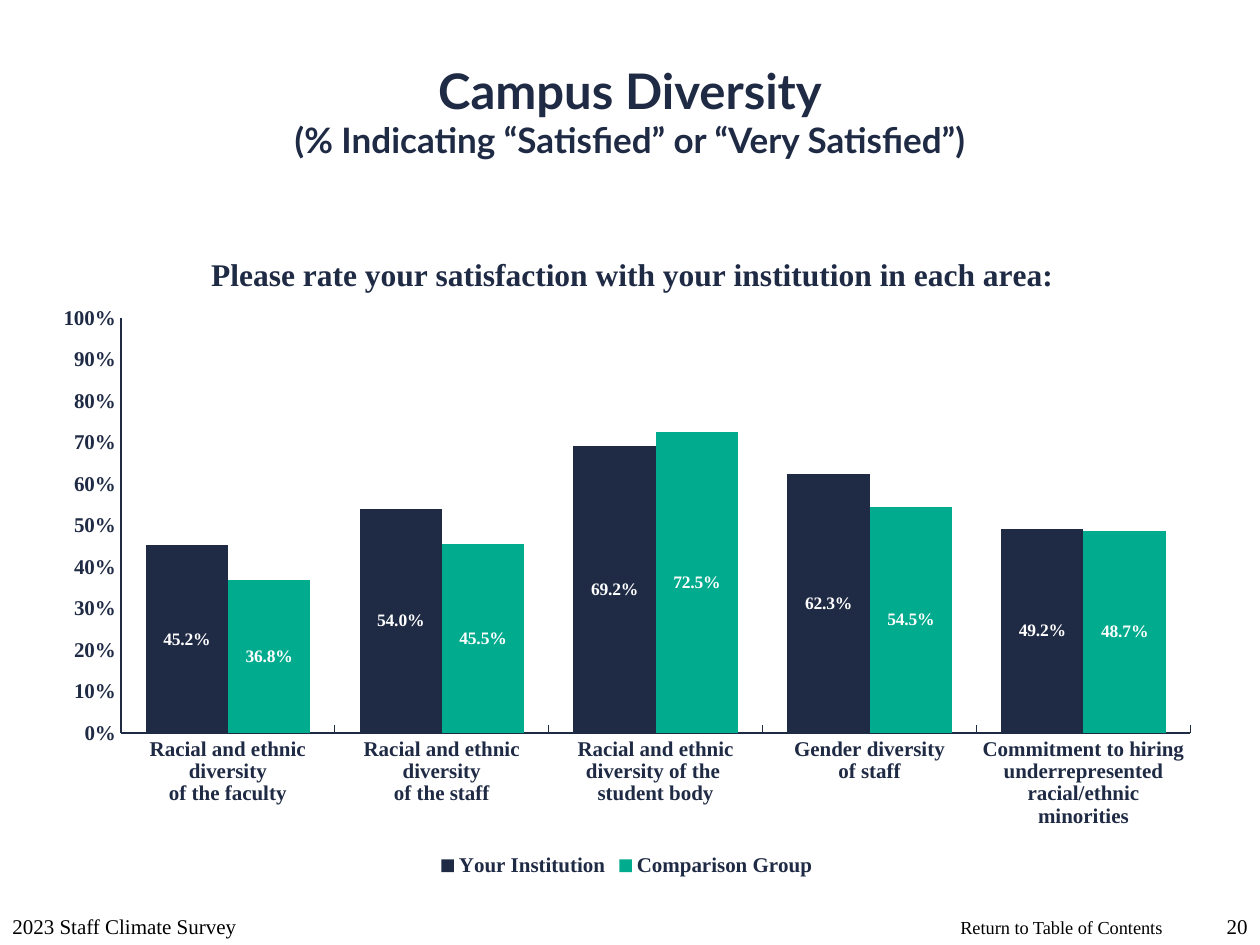
from lxml.etree import SubElement
from pptx import Presentation
from pptx.chart.data import CategoryChartData
from pptx.dml.color import RGBColor
from pptx.enum.chart import XL_CHART_TYPE, XL_LABEL_POSITION, XL_LEGEND_POSITION, XL_TICK_MARK
from pptx.enum.text import MSO_ANCHOR, MSO_AUTO_SIZE, PP_ALIGN
from pptx.oxml.ns import qn
from pptx.util import Pt

TITLE_LINES = ["Campus Diversity", "(% Indicating “Satisfied” or “Very Satisfied”)"]
QUESTION = "Please rate your satisfaction with your institution in each area:"
AREAS = [
    "Racial and ethnic diversity\nof the faculty",
    "Racial and ethnic diversity\nof the staff",
    "Racial and ethnic diversity of the \nstudent body",
    "Gender diversity\nof staff",
    "Commitment to hiring underrepresented racial/ethnic minorities",
]
GROUPS = [
    ("Your Institution", "navy", [0.452, 0.54, 0.692, 0.623, 0.492]),
    ("Comparison Group", "green", [0.368, 0.455, 0.725, 0.545, 0.487]),
]
# text, box in px, size, alignment, anchor, wrap
FOOTERS = [
    ("Return to Table of Contents", (948, 910, 229, 35), "link", PP_ALIGN.LEFT, MSO_ANCHOR.TOP, False),
    ("2023 Staff Climate Survey", (0, 882, 399, 63), "footer", PP_ALIGN.LEFT, MSO_ANCHOR.BOTTOM, True),
    ("20", (1197, 882, 63, 63), "footer", PP_ALIGN.RIGHT, MSO_ANCHOR.BOTTOM, True),
]
SLIDE_SIZE = (1260, 945)
TITLE_BOX = (0, 32, 1260, 157)
CHART_BOX = (40, 220, 1174, 662)
PLOT_BOX = (121, 318, 1069, 415)
QUESTION_CORNER = (205, 249)

THEME = {
    "color": {name: RGBColor.from_string(value) for name, value in
              {"navy": "1F2A44", "green": "00AB8E", "white": "FFFFFF", "black": "000000"}.items()},
    "size": {"title": 28, "subtitle": 20, "question": 18, "axis": 12, "label": 10,
             "link": 10.5, "footer": 12},
    "heading": "Lato",
    "body": "Times New Roman",
}
EMU_PER_PX = 914400 / 126


def px(*lengths):
    return [round(length * EMU_PER_PX) for length in lengths]


def style(font, size, color, bold=True, face="body"):
    font.name = THEME[face]
    font.size = Pt(THEME["size"][size])
    font.bold = bold
    font.color.rgb = THEME["color"][color]


def set_layout(parent, before, corner, extent=None):
    """Place a chart part by hand, in fractions of the chart box."""
    for old in parent.findall(qn("c:layout")):
        parent.remove(old)
    layout = SubElement(parent, qn("c:layout"))
    manual = SubElement(layout, qn("c:manualLayout"))
    left, top, width, height = CHART_BOX
    settings = [("xMode", "edge"), ("yMode", "edge"),
                ("x", round((corner[0] - left) / width, 3)),
                ("y", round((corner[1] - top) / height, 3))]
    if extent:
        settings = [("layoutTarget", "inner"), *settings,
                    ("w", round(extent[0] / width, 3)), ("h", round(extent[1] / height, 3))]
    for tag, value in settings:
        SubElement(manual, qn(f"c:{tag}")).set("val", str(value))
    parent.find(qn(before)).addprevious(layout)


def add_title(slide):
    title = slide.shapes.title
    title.left, title.top, title.width, title.height = px(*TITLE_BOX)
    frame = title.text_frame
    frame.text = "\v".join(TITLE_LINES)
    frame.auto_size = MSO_AUTO_SIZE.NONE
    frame.vertical_anchor = MSO_ANCHOR.MIDDLE
    frame.paragraphs[0].alignment = PP_ALIGN.CENTER
    for run, size in zip(frame.paragraphs[0].runs, ("title", "subtitle")):
        style(run.font, size, "navy", face="heading")


def add_satisfaction_chart(slide):
    data = CategoryChartData(number_format="0.0%")
    data.categories = AREAS
    for name, _, shares in GROUPS:
        data.add_series(name, shares)
    chart = slide.shapes.add_chart(XL_CHART_TYPE.COLUMN_CLUSTERED, *px(*CHART_BOX), data).chart
    style(chart.font, "label", "navy")

    question = chart.chart_title
    question.text_frame.text = QUESTION
    style(question.text_frame.paragraphs[0].runs[0].font, "question", "navy")
    question.include_in_layout = False
    title_xml = chart._chartSpace.chart.find(qn("c:title"))
    set_layout(title_xml, "c:overlay", QUESTION_CORNER)
    set_layout(chart._chartSpace.chart.plotArea, "c:barChart", PLOT_BOX[:2], PLOT_BOX[2:])

    chart.has_legend = True
    chart.legend.position = XL_LEGEND_POSITION.BOTTOM
    chart.legend.include_in_layout = False
    style(chart.legend.font, "axis", "navy")

    shares_axis = chart.value_axis
    shares_axis.minimum_scale, shares_axis.maximum_scale, shares_axis.major_unit = 0, 1, 0.1
    shares_axis.has_major_gridlines = False
    shares_axis.tick_labels.number_format = "0%"
    shares_axis.tick_labels.number_format_is_linked = False
    for axis, tick in ((shares_axis, XL_TICK_MARK.NONE), (chart.category_axis, XL_TICK_MARK.INSIDE)):
        axis.major_tick_mark = tick
        axis.minor_tick_mark = XL_TICK_MARK.NONE
        axis.format.line.color.rgb = THEME["color"]["navy"]
        axis.format.line.width = Pt(0.75)
        style(axis.tick_labels.font, "axis", "navy")

    plot = chart.plots[0]
    plot.gap_width, plot.overlap = 60, 0
    plot.vary_by_categories = False
    for series, (_, color, _) in zip(plot.series, GROUPS):
        series.format.fill.solid()
        series.format.fill.fore_color.rgb = THEME["color"][color]
        labels = series.data_labels
        labels.show_value = True
        labels.position = XL_LABEL_POSITION.CENTER
        labels.number_format = "0.0%"
        labels.number_format_is_linked = False
        style(labels.font, "label", "white")


def add_footer(slide, text, box, size, alignment, anchor, wrap):
    frame = slide.shapes.add_textbox(*px(*box)).text_frame
    frame.text = text
    frame.word_wrap = wrap
    frame.vertical_anchor = anchor
    frame.paragraphs[0].alignment = alignment
    style(frame.paragraphs[0].runs[0].font, size, "black", bold=False)


def main():
    deck = Presentation()
    deck.slide_width, deck.slide_height = px(*SLIDE_SIZE)
    slide = deck.slides.add_slide(deck.slide_layouts[5])
    add_title(slide)
    add_satisfaction_chart(slide)
    for footer in FOOTERS:
        add_footer(slide, *footer)
    deck.save("out.pptx")


if __name__ == "__main__":
    main()
